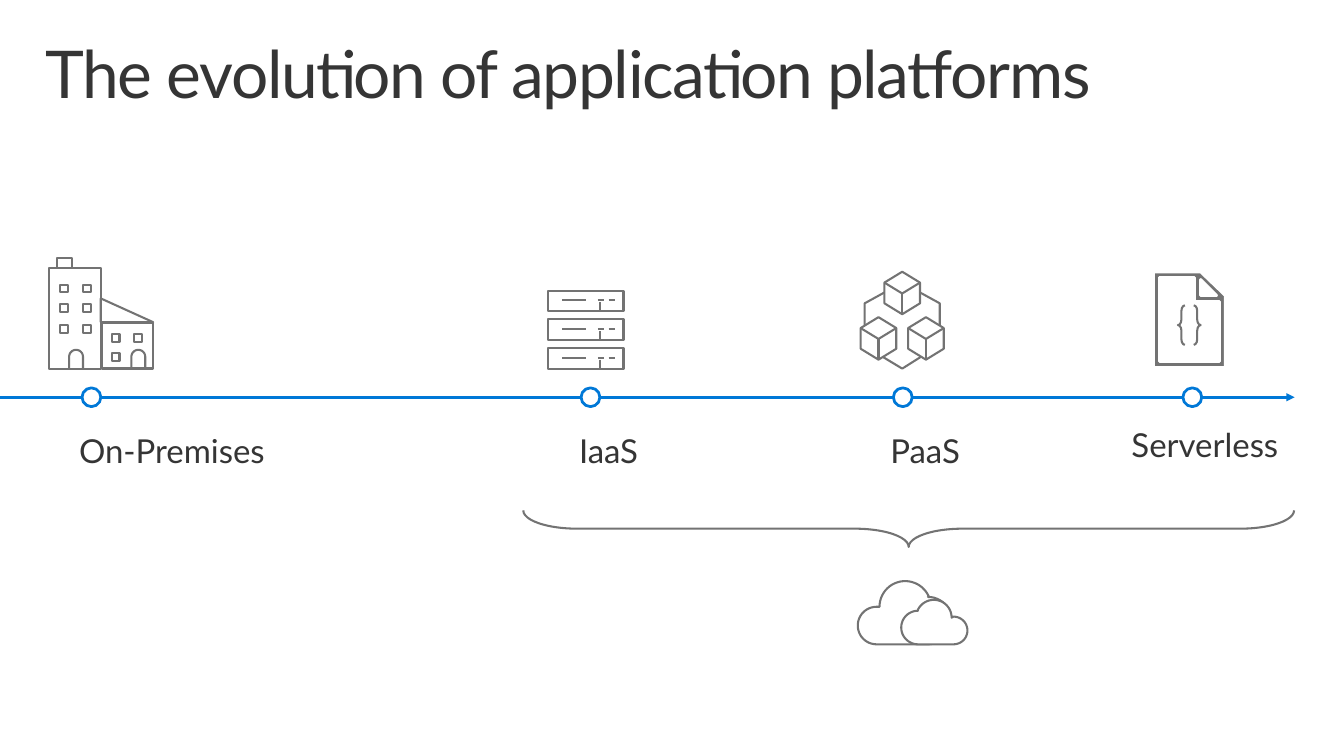
from dataclasses import dataclass
from itertools import product
from math import cos, radians, sin
from typing import Callable, Optional, Union

from lxml.etree import SubElement
from pptx import Presentation
from pptx.dml.color import RGBColor
from pptx.enum.shapes import MSO_CONNECTOR, MSO_SHAPE
from pptx.enum.text import MSO_ANCHOR, MSO_AUTO_SIZE, PP_ALIGN
from pptx.oxml.ns import qn
from pptx.shapes.autoshape import Shape
from pptx.shapes.connector import Connector
from pptx.shapes.shapetree import GroupShapes, SlideShapes
from pptx.text.text import TextFrame
from pptx.util import Cm, Pt

Canvas = Union[SlideShapes, GroupShapes]
Point = tuple[float, float]


@dataclass(frozen=True)
class Theme:
    font: str = "Lato"
    ink: RGBColor = RGBColor(0x35, 0x35, 0x35)
    icon: RGBColor = RGBColor(0x73, 0x73, 0x73)
    axis: RGBColor = RGBColor(0x00, 0x78, 0xD7)
    paper: RGBColor = RGBColor(0xFF, 0xFF, 0xFF)
    title_size: float = 48
    label_size: float = 24
    icon_width: float = 1.5
    axis_width: float = 2
    page_width: float = 2.25


@dataclass(frozen=True)
class Arc:
    """Clockwise circular arc, angles in degrees from the right."""
    x: float
    y: float
    radius: float
    start: int
    end: int

    def points(self) -> list[Point]:
        angles = [radians(self.start + (self.end - self.start) * i / 24) for i in range(25)]
        return [(self.x + self.radius * cos(a), self.y + self.radius * sin(a)) for a in angles]


@dataclass(frozen=True)
class Stage:
    name: str
    marker: float
    label_left: float
    label_top: float
    label_width: float
    draw_icon: Callable[[GroupShapes], None]


THEME = Theme()
AXIS_Y = 4.02
MARKER = 0.19


def grid(units: float) -> Cm:
    """Turn the drawing grid, whose unit is 2.54 cm, into a length."""
    return Cm(units * 2.54)


def stroke(item: Union[Shape, Connector], color: RGBColor, width: float) -> None:
    item.line.color.rgb = color
    item.line.width = Pt(width)


def paint(shape: Shape, fill: Optional[RGBColor], color: RGBColor, width: float) -> None:
    shape.shadow.inherit = False
    if fill is None:
        shape.fill.background()
    else:
        shape.fill.solid()
        shape.fill.fore_color.rgb = fill
    stroke(shape, color, width)


def preset(canvas: Canvas, kind: MSO_SHAPE, left: float, top: float, width: float, height: float,
           fill: Optional[RGBColor] = None, color: RGBColor = THEME.icon,
           weight: float = THEME.icon_width) -> Shape:
    shape = canvas.add_shape(kind, grid(left), grid(top), grid(width), grid(height))
    paint(shape, fill, color, weight)
    return shape


def line(canvas: Canvas, start: Point, end: Point, color: RGBColor = THEME.icon,
         width: float = THEME.icon_width) -> Connector:
    connector = canvas.add_connector(MSO_CONNECTOR.STRAIGHT, *map(grid, start + end))
    stroke(connector, color, width)
    SubElement(connector._element.spPr, qn("a:effectLst"))
    return connector


def outline(canvas: Canvas, *contours: list[Point], closed: bool = False,
            fill: Optional[RGBColor] = None, color: RGBColor = THEME.icon,
            width: float = THEME.icon_width) -> None:
    paths = [[(grid(x), grid(y)) for x, y in contour] for contour in contours]
    builder = canvas.build_freeform(*paths[0][0])
    builder.add_line_segments(paths[0][1:], close=closed)
    for path in paths[1:]:
        builder.move_to(*path[0])
        builder.add_line_segments(path[1:], close=closed)
    paint(builder.convert_to_shape(), fill, color, width)


def draw_buildings(canvas: GroupShapes) -> None:
    for block in [(0.5, 2.71, 0.52, 1.02), (0.58, 2.61, 0.15, 0.1), (1.03, 3.27, 0.52, 0.46)]:
        preset(canvas, MSO_SHAPE.RECTANGLE, *block)
    windows = [*product((0.61, 0.84), (2.88, 3.08, 3.29)), (1.13, 3.38), (1.36, 3.38), (1.13, 3.57)]
    for left, top in windows:
        preset(canvas, MSO_SHAPE.RECTANGLE, left, top, 0.08, 0.08)
    for door in (0.77, 1.4):
        arch = Arc(door, 3.61, 0.07, 180, 360).points()
        outline(canvas, [(door - 0.07, 3.73), *arch, (door + 0.07, 3.73)])
    roof = preset(canvas, MSO_SHAPE.ISOSCELES_TRIANGLE, 1.02, 3.02, 0.53, 0.24)
    roof.adjustments[0] = 0


def draw_servers(canvas: GroupShapes) -> None:
    for top in (2.94, 3.23, 3.52):
        preset(canvas, MSO_SHAPE.RECTANGLE, 5.55, top, 0.76, 0.21)
        for left, right in [(5.69, 5.93), (6.05, 6.11), (6.16, 6.22)]:
            line(canvas, (left, top + 0.1), (right, top + 0.1))
        line(canvas, (6.07, top + 0.12), (6.07, top + 0.2))


def draw_cubes(canvas: GroupShapes) -> None:
    for x, y in [(9.37, 3.21), (8.89, 3.21), (9.13, 2.75)]:
        left, right, upper, lower = x - 0.18, x + 0.18, y + 0.11, y + 0.32
        outline(canvas, [(left, upper), (x, y), (right, upper), (right, lower),
                         (x, y + 0.43), (left, lower)], closed=True)
        outline(canvas, [(right, upper), (x, y + 0.22), (left, upper)])
        line(canvas, (x, y + 0.22), (x, y + 0.43))
    for link in ([(9.32, 3.61), (9.13, 3.73), (8.93, 3.61)],
                 [(9.31, 2.96), (9.51, 3.07), (9.51, 3.29)],
                 [(8.75, 3.29), (8.75, 3.07), (8.95, 2.96)]):
        outline(canvas, link)


def draw_code_file(canvas: GroupShapes) -> None:
    page = [(12.4, 2.99), (12.15, 2.75), (11.67, 2.75), (11.67, 3.72), (12.4, 3.72)]
    fold = [(12.15, 2.83), (12.31, 2.99), (12.15, 2.99)]
    sheet = [(11.73, 3.66), (11.73, 2.81), (12.09, 2.81), (12.09, 3.05), (12.34, 3.05), (12.34, 3.66)]
    outline(canvas, page, fold, sheet, closed=True, fill=THEME.icon,
            color=THEME.paper, width=THEME.page_width)
    for kind, left in [(MSO_SHAPE.LEFT_BRACE, 11.92), (MSO_SHAPE.RIGHT_BRACE, 12.08)]:
        brace = preset(canvas, kind, left, 3.09, 0.07, 0.4)
        brace.adjustments[0] = 0.8


def draw_clouds(canvas: GroupShapes) -> None:
    back = [Arc(9.16, 6.14, 0.26, 180, 338), Arc(9.39, 6.28, 0.24, 270, 450),
            Arc(8.87, 6.33, 0.19, 90, 270)]
    front = [Arc(9.45, 6.25, 0.18, 202, 360), Arc(9.65, 6.38, 0.14, 270, 450),
             Arc(9.29, 6.35, 0.17, 90, 270)]
    for arcs, fill in [(back, None), (front, THEME.paper)]:
        outline(canvas, [point for arc in arcs for point in arc.points()], closed=True, fill=fill)


def write(frame: TextFrame, text: str, size: float, side: float, edge: float,
          tracking: int = 0, after: float = 0) -> None:
    """Fill a frame with one line; tracking is in hundredths of a point."""
    frame.margin_left = frame.margin_right = grid(side)
    frame.margin_top = frame.margin_bottom = grid(edge)
    frame.vertical_anchor = MSO_ANCHOR.TOP
    paragraph = frame.paragraphs[0]
    paragraph.alignment = PP_ALIGN.LEFT
    paragraph.line_spacing = 0.9
    paragraph.space_after = Pt(after)
    run = paragraph.add_run()
    run.text = text
    run.font.name, run.font.size = THEME.font, Pt(size)
    run.font.color.rgb = THEME.ink
    if tracking:
        run.font._element.set("spc", str(tracking))


def draw_label(canvas: Canvas, stage: Stage) -> None:
    label = canvas.add_textbox(grid(stage.label_left), grid(stage.label_top),
                               grid(stage.label_width), grid(0.69))
    label.text_frame.word_wrap = False
    label.text_frame.auto_size = MSO_AUTO_SIZE.SHAPE_TO_FIT_TEXT
    write(label.text_frame, stage.name, THEME.label_size, 0.2, 0.16, after=6)


STAGES = [
    Stage("On-Premises", 0.83, 0.6, 4.24, 2.33, draw_buildings),
    Stage("IaaS", 5.88, 5.66, 4.24, 1.03, draw_servers),
    Stage("PaaS", 9.04, 8.81, 4.24, 1.13, draw_cubes),
    Stage("Serverless", 11.97, 11.25, 4.18, 1.9, draw_code_file),
]


def main() -> None:
    deck = Presentation()
    deck.slide_width, deck.slide_height = grid(13.6), grid(7.65)
    slide = deck.slides.add_slide(deck.slide_layouts[5])
    shapes = slide.shapes
    title = shapes.title
    title.left, title.top, title.width, title.height = map(grid, (0.3, 0.32, 13, 1))
    title.text_frame.auto_size = MSO_AUTO_SIZE.NONE
    write(title.text_frame, "The evolution of application platforms", THEME.title_size,
          0.16, 0.1, tracking=-100)

    axis = line(shapes, (0, AXIS_Y), (13.1, AXIS_Y), THEME.axis, THEME.axis_width)
    SubElement(axis.line._get_or_add_ln(), qn("a:tailEnd"), type="triangle")
    for stage in STAGES:
        preset(shapes, MSO_SHAPE.OVAL, stage.marker, AXIS_Y - MARKER / 2, MARKER, MARKER,
               THEME.paper, THEME.axis, THEME.axis_width)
        stage.draw_icon(shapes.add_group_shape().shapes)
        draw_label(shapes, stage)

    cloud_brace = preset(shapes, MSO_SHAPE.RIGHT_BRACE, 9.01, 1.45, 0.37, 7.8)
    cloud_brace.rotation = 90
    cloud_brace.adjustments[0] = 1.47
    draw_clouds(shapes.add_group_shape().shapes)
    deck.save("out.pptx")


if __name__ == "__main__":
    main()
